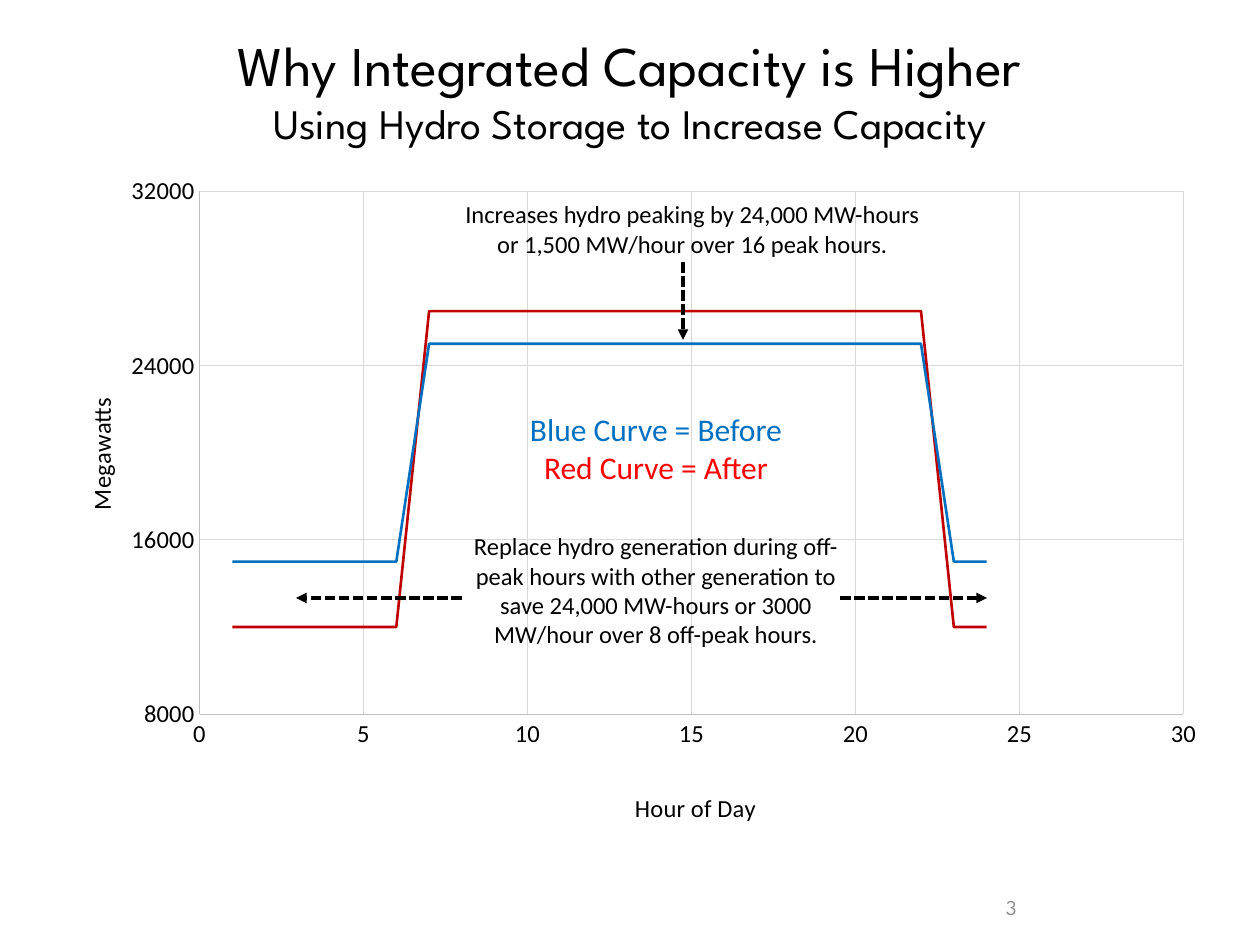
import pptx
import pptx.util
import pptx.oxml
import pptx.oxml.ns
import pptx.chart.data
import pptx.dml.color
import pptx.enum.chart
import pptx.enum.dml
import pptx.enum.shapes
import pptx.enum.text

PX = 914400 / 126
HEAD, BODY = "League Spartan", "Calibri"
BLACK, BLUE, RED = "000000", "0070C0", "FF0000"

TITLE = [("Why Integrated Capacity is Higher", 32),
         ("Using Hydro Storage to Increase Capacity", 24)]

# name, off-peak MW, peak MW, colour
CURVES = [("Series 1", 15000, 25000, BLUE),
          ("Series 2", 12000, 26500, "C00000")]
HOURS = range(1, 25)
PEAK_HOURS = range(7, 23)

# title, minimum, maximum, step, title position as a share of the chart
X_AXIS = ("Hour of Day", 0, 30, 5, (0.5, 0.91))
Y_AXIS = ("Megawatts", 8000, 32000, 8000, (0.04, 0.35))

# box, lines of (text, colour), size
NOTES = [
    ((445, 193, 495, 73),
     [("Increases hydro peaking by 24,000 MW-hours or 1,500 MW/hour over 16 peak hours.", BLACK)], 14),
    ((456, 525, 400, 166),
     [("Replace hydro generation during off-peak hours with other generation to save "
       "24,000 MW-hours or 3000 MW/hour over 8 off-peak hours.", BLACK)], 14),
    ((509, 404, 294, 90),
     [("Blue Curve = Before", BLUE), ("Red Curve = After", RED)], 18),
]

ARROWS = [(683, 262, 683, 340), (462, 598, 296, 598), (840, 598, 987, 598)]


def px(*values):
    return [pptx.util.Emu(round(v * PX)) for v in values]


def rgb(hex_color):
    return pptx.dml.color.RGBColor.from_string(hex_color)


def style(font, size=14, color=BLACK, name=BODY):
    font.size, font.name, font.bold = pptx.util.Pt(size), name, False
    font.color.rgb = rgb(color)


def add_run(p, text, **fmt):
    r = p.add_run()
    r.text = text
    style(r.font, **fmt)


def set_line(line, color, width):
    line.color.rgb = rgb(color)
    line.width = pptx.util.Pt(width)


def add_text(s, box, lines, size, align="CENTER", anchor="TOP", name=BODY):
    tf = s.shapes.add_textbox(*px(*box)).text_frame
    tf.word_wrap = True
    tf.vertical_anchor = pptx.enum.text.MSO_ANCHOR[anchor]
    for i, (text, color) in enumerate(lines):
        p = tf.add_paragraph() if i else tf.paragraphs[0]
        p.alignment = pptx.enum.text.PP_ALIGN[align]
        add_run(p, text, size=size, color=color, name=name)


def add_arrow(s, ends):
    c = s.shapes.add_connector(pptx.enum.shapes.MSO_CONNECTOR.STRAIGHT, *px(*ends))
    set_line(c.line, BLACK, 2)
    c.line.dash_style = pptx.enum.dml.MSO_LINE.SQUARE_DOT
    ln = c.line._get_or_add_ln()
    ln.append(pptx.oxml.parse_xml(
        f'<a:tailEnd {pptx.oxml.ns.nsdecls("a")} type="triangle"/>'))
    c._element.spPr.append(pptx.oxml.parse_xml(
        f'<a:effectLst {pptx.oxml.ns.nsdecls("a")}/>'))


def manual_layout(x, y, size=None):
    """Layout element in shares of the chart; with a size it is an inner plot area."""
    parts = [("xMode", "edge"), ("yMode", "edge"), ("x", x), ("y", y)]
    if size:
        parts = [("layoutTarget", "inner")] + parts + list(zip("wh", size))
    body = "".join(f'<c:{tag} val="{val}"/>' for tag, val in parts)
    return pptx.oxml.parse_xml(
        f'<c:layout {pptx.oxml.ns.nsdecls("c")}><c:manualLayout>{body}'
        '</c:manualLayout></c:layout>')


def replace_layout(parent, layout, index):
    for old in parent.findall(pptx.oxml.ns.qn("c:layout")):
        parent.remove(old)
    parent.insert(index, layout)


def format_axis(axis, title, low, high, step, place):
    axis.minimum_scale, axis.maximum_scale, axis.major_unit = low, high, step
    axis.major_tick_mark = axis.minor_tick_mark = pptx.enum.chart.XL_TICK_MARK.NONE
    axis.has_major_gridlines = True
    set_line(axis.major_gridlines.format.line, "D9D9D9", 0.75)
    set_line(axis.format.line, "BFBFBF", 0.75)
    style(axis.tick_labels.font)
    axis.tick_labels.number_format = "General"
    axis.tick_labels.number_format_is_linked = False
    add_run(axis.axis_title.text_frame.paragraphs[0], title)
    replace_layout(axis.axis_title._element, manual_layout(*place), 1)


def add_capacity_chart(s):
    data = pptx.chart.data.XyChartData()
    for name, off_peak, peak, _ in CURVES:
        points = data.add_series(name)
        for hour in HOURS:
            points.add_data_point(hour, peak if hour in PEAK_HOURS else off_peak)
    kind = pptx.enum.chart.XL_CHART_TYPE.XY_SCATTER_LINES_NO_MARKERS
    chart = s.shapes.add_chart(kind, *px(32, 147, 1197, 703), data).chart
    chart.has_legend = chart.has_title = False
    style(chart.font)
    plot = chart.plots[0]
    plot.vary_by_categories = False
    for series, (*_, color) in zip(plot.series, CURVES):
        series.smooth = False
        series.marker.style = pptx.enum.chart.XL_MARKER_STYLE.NONE
        set_line(series.format.line, color, 1.5)
    format_axis(chart.category_axis, *X_AXIS)
    format_axis(chart.value_axis, *Y_AXIS)
    area = chart._chartSpace.chart.plotArea
    replace_layout(area, manual_layout(0.14, 0.063, (0.822, 0.744)), 0)


def add_title(s):
    title = s.shapes.title
    title.left, title.top, title.width, title.height = px(42, 21, 1176, 136)
    tf = title.text_frame
    tf.vertical_anchor = pptx.enum.text.MSO_ANCHOR.MIDDLE
    p = tf.paragraphs[0]
    p.alignment = pptx.enum.text.PP_ALIGN.CENTER
    for i, (text, size) in enumerate(TITLE):
        if i:
            p.add_line_break()
        add_run(p, text, size=size, name=HEAD)


def main():
    prs = pptx.Presentation()
    prs.slide_width, prs.slide_height = px(1260, 945)
    s = prs.slides.add_slide(prs.slide_layouts.get_by_name("Title Only"))
    add_title(s)
    add_capacity_chart(s)
    add_text(s, (735, 882, 294, 50), [("3", "8C8C8C")], 12,
             align="RIGHT", anchor="MIDDLE", name=HEAD)
    for box, lines, size in NOTES:
        add_text(s, box, lines, size)
    for ends in ARROWS:
        add_arrow(s, ends)
    prs.save("out.pptx")


if __name__ == "__main__":
    main()
